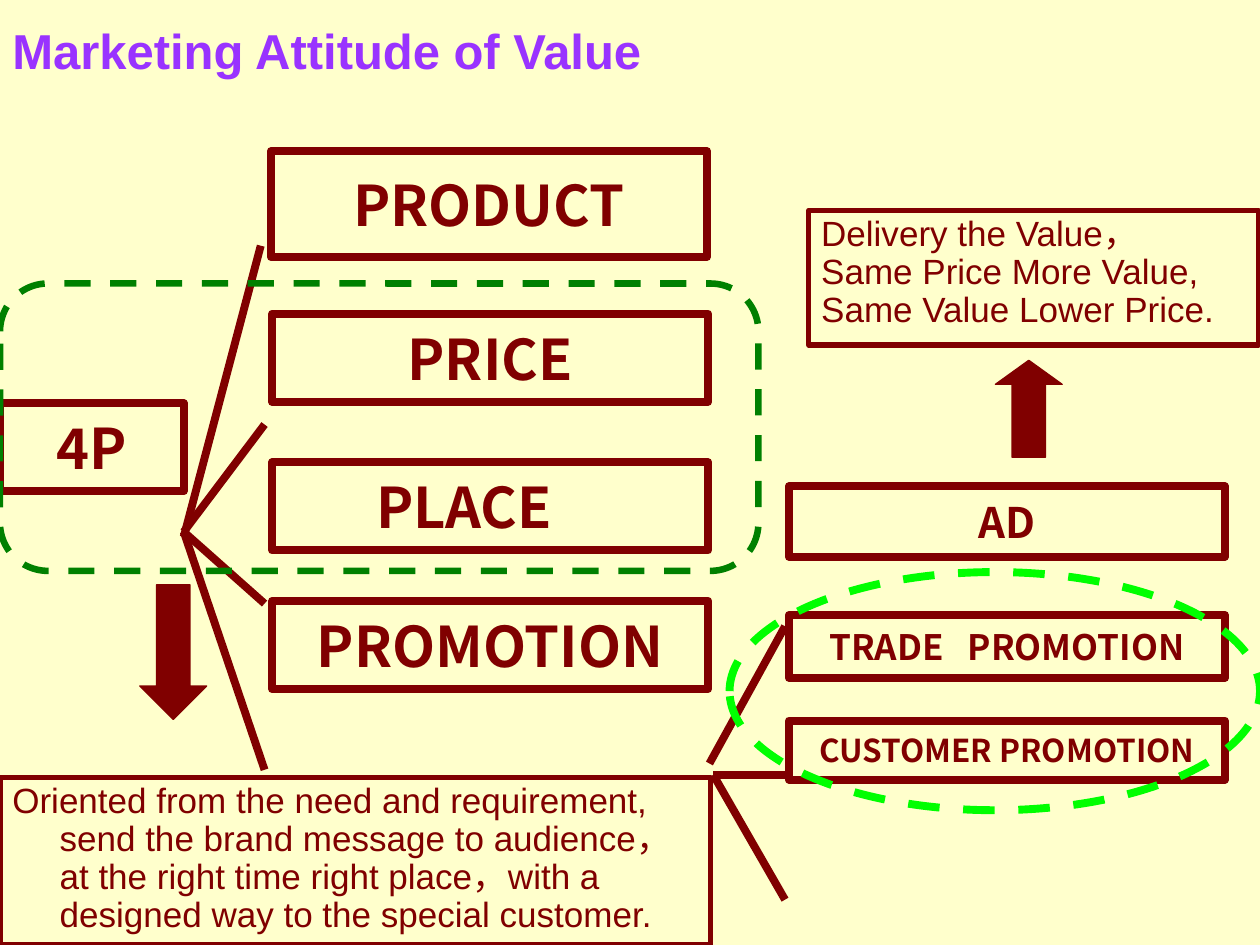
from pptx import Presentation
from pptx.dml.color import RGBColor
from pptx.enum.dml import MSO_LINE
from pptx.enum.shapes import MSO_CONNECTOR, MSO_SHAPE
from pptx.enum.text import MSO_ANCHOR, PP_ALIGN
from pptx.oxml.ns import qn
from pptx.util import Pt
from lxml.etree import SubElement

CREAM = RGBColor(0xFF, 0xFF, 0xCC)
MAROON = RGBColor(0x80, 0x00, 0x00)
PURPLE = RGBColor(0x99, 0x33, 0xFF)
GREEN = RGBColor(0x00, 0x80, 0x00)
LIME = RGBColor(0x00, 0xFF, 0x00)
BODY_FONT = "Arial"
LABEL_FONT = "Noto Sans CJK SC"


def add_run(p, text, size, font, color, bold=False):
    r = p.add_run()
    r.text = text
    r.font.size = Pt(size)
    r.font.name = font
    r.font.bold = bold
    r.font.color.rgb = color
    return r


def outline(s, kind, x, y, w, h, color=MAROON, weight=4.5):
    sp = s.shapes.add_shape(kind, Pt(x), Pt(y), Pt(w), Pt(h))
    sp.shadow.inherit = False
    sp.fill.background()
    sp.line.color.rgb = color
    sp.line.width = Pt(weight)
    return sp


def dashed(s, kind, x, y, w, h, color, weight):
    sp = outline(s, kind, x, y, w, h, color, weight)
    sp.line.dash_style = MSO_LINE.DASH
    return sp


def label(s, words, x, y, w, h, size, gap=0, right=7.2):
    sp = outline(s, MSO_SHAPE.RECTANGLE, x, y, w, h)
    tf = sp.text_frame
    tf.vertical_anchor = MSO_ANCHOR.MIDDLE
    tf.margin_top = tf.margin_bottom = 0
    tf.margin_right = Pt(right)
    p = tf.paragraphs[0]
    p.alignment = PP_ALIGN.CENTER
    for i, word in enumerate(words):
        if i:
            r = add_run(p, " ", size, LABEL_FONT, MAROON, True)
            r._r.get_or_add_rPr().set("spc", str(gap * 100))
        add_run(p, word, size, LABEL_FONT, MAROON, True)


def branch(s, x1, y1, x2, y2):
    c = s.shapes.add_connector(MSO_CONNECTOR.STRAIGHT, Pt(x1), Pt(y1), Pt(x2), Pt(y2))
    c.line.color.rgb = MAROON
    c.line.width = Pt(4.5)
    SubElement(c._element.spPr, qn("a:effectLst"))


def arrow(s, x, y, w, h, head, rotation=0):
    sp = outline(s, MSO_SHAPE.UP_ARROW, x, y, w, h, weight=0.75)
    sp.fill.solid()
    sp.fill.fore_color.rgb = MAROON
    sp.adjustments[1] = head
    sp.rotation = rotation


def add_title(s, x, y, w, h):
    tf = s.shapes.add_textbox(Pt(x), Pt(y), Pt(w), Pt(h)).text_frame
    tf.word_wrap = True
    tf.vertical_anchor = MSO_ANCHOR.MIDDLE
    add_run(tf.paragraphs[0], "Marketing Attitude of Value", 28, BODY_FONT, PURPLE, True)


def add_four_ps(s, x, y, w, h):
    label(s, ["4P"], x, y + 144, 105, 50.4, 32)
    bar_w = 249.2
    bar_x = x + w - bar_w
    label(s, ["PRODUCT"], bar_x - 0.7, y, bar_w, 60.5, 32)
    for word, dy, right in (("PRICE", 92.9, 7.2), ("PLACE", 177.8, 37), ("PROMOTION", h - 50.4, 7.2)):
        label(s, [word], bar_x, y + dy, bar_w, 50.4, 32, right=right)
    hub_x, hub_y = x + 105, y + 217.5
    branch(s, hub_x, hub_y + 2.9, x + 149, y + 54)
    for dy in (156.2, 258.5, 353.5):
        branch(s, hub_x, hub_y, x + 151.2, y + dy)


def add_promotion_mix(s, x, y, w, h):
    bar_x, bar_w = x + 45.4, 249.2
    label(s, ["AD"], bar_x, y, bar_w, 40.3, 24)
    label(s, ["TRADE", "PROMOTION"], bar_x, y + 73.5, bar_w, 36, 20, gap=9)
    label(s, ["CUSTOMER PROMOTION"], bar_x, y + 133.9, bar_w, 33.8, 18)
    tip_x = x + 43.2
    branch(s, x, y + 158.4, tip_x, y + 80)
    for dy in (164.9, h):
        branch(s, x + 2.2, y + 164.9, tip_x, y + dy)
    dashed(s, MSO_SHAPE.OVAL, x + 11.5, y + 49, w - 11.5, 136.1, LIME, 4.5)


def add_note(s, lines, x, y, w, h):
    tf = outline(s, MSO_SHAPE.RECTANGLE, x, y, w, h, weight=3).text_frame
    tf.word_wrap = True
    tf.vertical_anchor = MSO_ANCHOR.TOP
    for i, line in enumerate(lines):
        p = tf.add_paragraph() if i else tf.paragraphs[0]
        p.alignment = PP_ALIGN.LEFT
        p.line_spacing = 0.9
        pPr = p._p.get_or_add_pPr()
        pPr.set("marL", str(Pt(27)))
        pPr.set("indent", str(-Pt(27)))
        add_run(p, line, 20, BODY_FONT, MAROON)


def main():
    prs = Presentation()
    prs.slide_width, prs.slide_height = Pt(720), Pt(540)
    s = prs.slides.add_slide(prs.slide_layouts[6])
    s.background.fill.solid()
    s.background.fill.fore_color.rgb = CREAM
    add_four_ps(s, 0, 86.4, 404.7, 307.4)
    add_promotion_mix(s, 405.4, 277.9, 314.6, 236.2)
    dashed(s, MSO_SHAPE.ROUNDED_RECTANGLE, 0, 162, 433.4, 164.2, GREEN, 3.75)
    add_note(s, ["Oriented from the need and requirement, send the brand message to audience，"
                 "at the right time right place，with a designed way to the special customer."],
             0, 444.2, 406.1, 95.8)
    add_note(s, ["Delivery the Value，", "Same Price More Value,", "Same Value Lower Price."],
             462.2, 120.2, 257, 77)
    arrow(s, 568.8, 205.9, 38.2, 55.4, 0.36)
    arrow(s, 79.9, 334.1, 38.2, 77, 0.5, rotation=180)
    add_title(s, 0, 0, 648, 56.9)
    prs.save("out.pptx")


if __name__ == "__main__":
    main()
